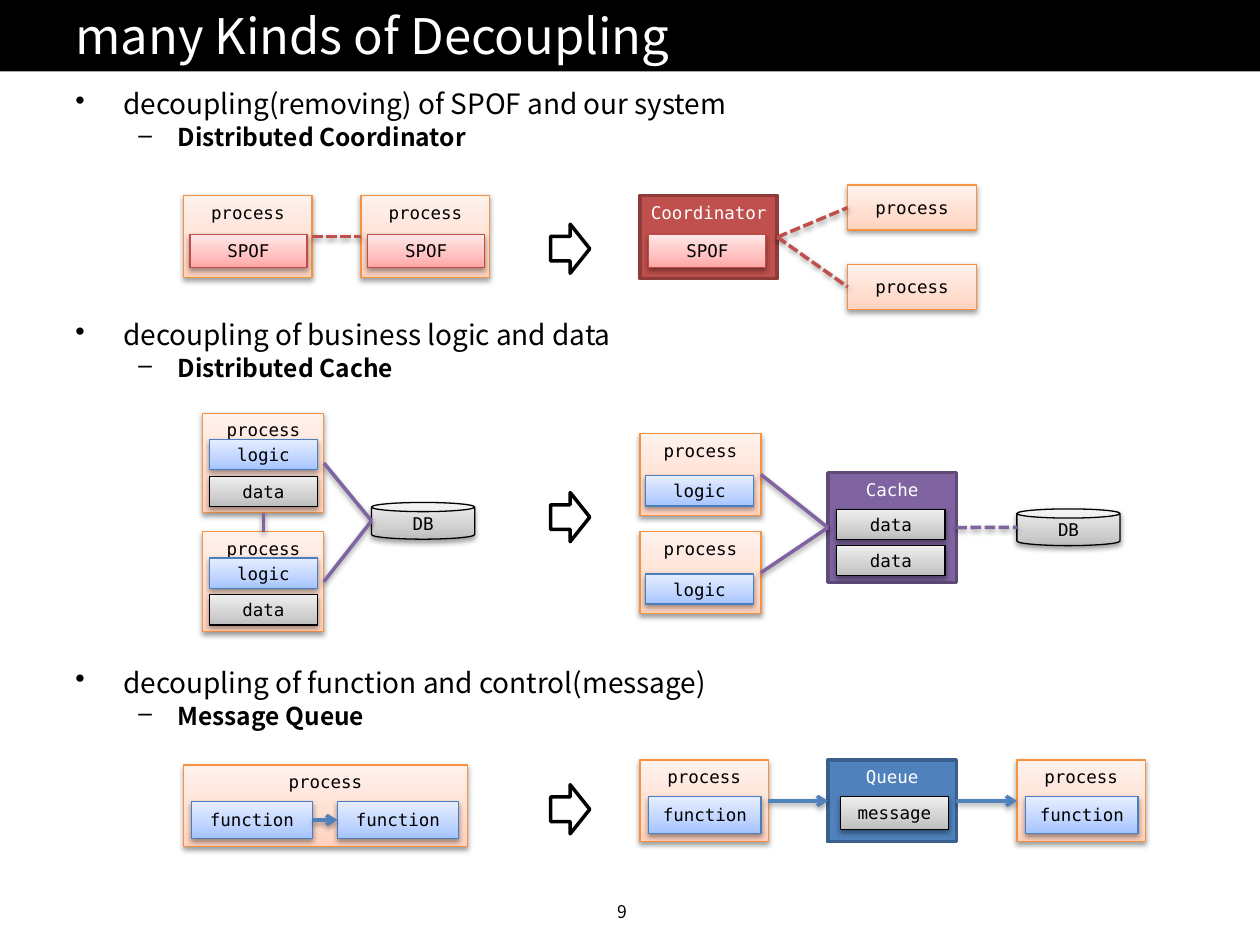
import copy

import pptx
import pptx.dml.color
import pptx.enum.dml
import pptx.enum.shapes
import pptx.enum.text
import pptx.oxml
import pptx.oxml.ns
import pptx.util

Cm, Pt = pptx.util.Cm, pptx.util.Pt
RGB = pptx.dml.color.RGBColor.from_string
SHAPE = pptx.enum.shapes.MSO_SHAPE
ANCHOR = pptx.enum.text.MSO_ANCHOR
ALIGN = pptx.enum.text.PP_ALIGN
qn = pptx.oxml.ns.qn

TEXT_FONT, LABEL_FONT = "Noto Sans CJK KR", "DejaVu Sans Mono"
BLACK, WHITE = RGB("000000"), RGB("FFFFFF")
RED, PURPLE, BLUE = RGB("C0504D"), RGB("8064A2"), RGB("4F81BD")

# Fill colours (three for a gradient, from the bottom up), then the outline
PROCESS = ([RGB("FFD2BD"), RGB("FFDED0"), RGB("FFF2ED")], RGB("F69240"))
SPOF = ([RGB("FFA6A5"), RGB("FFC0BF"), RGB("FFE7E7")], RGB("BF4C48"))
LOGIC = ([RGB("A4C4FF"), RGB("BFD4FF"), RGB("E6EEFF")], RGB("4B7EBC"))
DATA = ([RGB("BDBDBD"), RGB("D1D1D1"), RGB("EEEEEE")], BLACK)
COORDINATOR = ([RED], RGB("8E3B39"))
CACHE = ([PURPLE], RGB("5F4A78"))
QUEUE = ([BLUE], RGB("3A5F8C"))
ARROW = ([WHITE], BLACK)

# Sides of a rectangle
TOP, LEFT, BOTTOM, RIGHT = range(4)
# Left edges of the parts within a diagram, in cm
ARROW_X, AFTER_X, HUB_X, FAR_X = 7.4, 9.2, 12.99, 16.8


def format_runs(paragraph, size, color, font=TEXT_FONT, bold=False):
    for run in paragraph.runs:
        run.font.size, run.font.name, run.font.bold = Pt(size), font, bold
        run.font.color.rgb = color


def add_shadow(effects):
    effects.append(pptx.oxml.parse_xml(
        f'<a:outerShdw {pptx.oxml.ns.nsdecls("a")} blurRad="40000" dist="20000" '
        'dir="5400000" rotWithShape="0"><a:srgbClr val="000000">'
        '<a:alpha val="38000"/></a:srgbClr></a:outerShdw>'))


def add_box(shapes, x, y, width, height, style, label="",
            anchor=ANCHOR.MIDDLE, preset=SHAPE.RECTANGLE):
    colors, outline = style
    box = shapes.add_shape(preset, Cm(x), Cm(y), Cm(width), Cm(height))
    box.shadow.inherit = False
    box.line.color.rgb = outline
    if len(colors) == 1:
        box.fill.solid()
        box.fill.fore_color.rgb = colors[0]
        box.line.width = Pt(2)
    else:
        box.fill.gradient()
        box.fill.gradient_angle = 90
        properties = box.element.spPr
        stop_list = properties.find(".//" + qn("a:gsLst"))
        stop_list.insert(1, copy.deepcopy(stop_list[0]))
        for stop, position, color in zip(box.fill.gradient_stops, (0, 0.35, 1), colors):
            stop.position, stop.color.rgb = position, color
        box.line.width = Pt(0.75)
        add_shadow(properties.find(qn("a:effectLst")))
    if label:
        frame = box.text_frame
        frame.text = label
        frame.word_wrap, frame.vertical_anchor = False, anchor
        frame.paragraphs[0].alignment = ALIGN.CENTER
        format_runs(frame.paragraphs[0], 10, WHITE if len(colors) == 1 else BLACK, LABEL_FONT)
    return box


def add_node(slide, x, y, width, height, style, label, parts):
    """Group a labelled frame with its parts, given relative to the frame."""
    shapes = slide.shapes.add_group_shape().shapes
    frame = add_box(shapes, x, y, width, height, style, label, ANCHOR.TOP)
    boxes = [add_box(shapes, x + dx, y + dy, *rest) for dx, dy, *rest in parts]
    return frame, boxes


def add_database(slide, x, y):
    return add_box(slide.shapes, x, y, 2.08, 0.74, DATA, "DB", preset=SHAPE.CAN)


def add_step_arrow(slide, x, y):
    add_box(slide.shapes, x, y, 0.79, 0.99, ARROW, preset=SHAPE.RIGHT_ARROW)


def add_link(slide, start, end, color, dashed=False, arrow=False):
    """Join (rectangle, side) to (rectangle, side) or to a plain (x, y) point."""
    joins_box = not isinstance(end[0], int)
    end_point = (0, 0) if joins_box else end
    link = slide.shapes.add_connector(
        pptx.enum.shapes.MSO_CONNECTOR.STRAIGHT, 0, 0, *end_point)
    link.begin_connect(*start)
    if joins_box:
        link.end_connect(*end)
    link.line.color.rgb, link.line.width = color, Pt(2)
    if dashed:
        link.line.dash_style = pptx.enum.dml.MSO_LINE.SQUARE_DOT
    properties = link.element.spPr
    if arrow:
        tail = pptx.oxml.parse_xml(f'<a:tailEnd {pptx.oxml.ns.nsdecls("a")} type="arrow"/>')
        properties.find(qn("a:ln")).append(tail)
    effects = pptx.oxml.parse_xml(f'<a:effectLst {pptx.oxml.ns.nsdecls("a")}/>')
    add_shadow(effects)
    properties.append(effects)


def left_middle(box):
    return int(box.left), int(box.top + box.height / 2)


def add_title(slide, text):
    title = slide.shapes.title
    title.left, title.top, title.width, title.height = Cm(1.27), Cm(-0.08), Cm(24.13), Cm(1.57)
    title.text_frame.text = text
    title.text_frame.vertical_anchor = ANCHOR.MIDDLE
    title.text_frame.paragraphs[0].alignment = ALIGN.LEFT
    format_runs(title.text_frame.paragraphs[0], 28, WHITE)
    # Black band behind the title
    band = slide.shapes.add_shape(SHAPE.RECTANGLE, 0, Cm(-0.08), Cm(25.4), Cm(1.52))
    band.shadow.inherit = False
    band.fill.solid()
    band.fill.fore_color.rgb = BLACK
    band.line.fill.background()
    title.element.addprevious(band.element)


def add_heading(slide, x, y, kind, solution):
    frame = slide.shapes.add_textbox(Cm(x), Cm(y), Cm(22.83), Cm(1.7)).text_frame
    frame.word_wrap = True
    frame.text = f"{kind}\n{solution}"
    rows = (("•", 0.97, 0.97, 16, False), ("–", 2.06, 0.79, 14, True))
    for level, (paragraph, row) in enumerate(zip(frame.paragraphs, rows)):
        bullet, margin, hanging, size, bold = row
        format_runs(paragraph, size, BLACK, bold=bold)
        paragraph.level = level
        paragraph.line_spacing = 0.9
        paragraph.space_before = Pt(0.2 * size)
        properties = paragraph.runs[0].font and paragraph._p.get_or_add_pPr()
        properties.set("marL", str(Cm(margin)))
        properties.set("indent", str(-Cm(hanging)))
        properties.append(pptx.oxml.parse_xml(
            f'<a:buChar {pptx.oxml.ns.nsdecls("a")} char="{bullet}"/>'))


def add_coordinator_diagram(slide, x, y):
    spof = (2.36, 0.66, SPOF, "SPOF")
    # Before
    first, second = [
        add_node(slide, x + dx, y + 0.21, 2.59, 1.65, PROCESS, "process",
                 [(0.13, 0.79, *spof)])[0] for dx in (0, 3.58)]
    add_link(slide, (first, RIGHT), (second, LEFT), RED, dashed=True)
    add_step_arrow(slide, x + ARROW_X, y + 0.79)
    # After
    coordinator, _ = add_node(slide, x + AFTER_X, y + 0.21, 2.77, 1.68, COORDINATOR,
                              "Coordinator", [(0.18, 0.79, *spof)])
    for dy in (0, 1.6):
        process = add_box(slide.shapes, x + 13.39, y + dy, 2.59, 0.91, PROCESS, "process")
        add_link(slide, (coordinator, RIGHT), (process, LEFT), RED, dashed=True)


def add_cache_diagram(slide, x, y):
    logic, data = (2.18, 0.61, LOGIC, "logic"), (2.18, 0.61, DATA, "data")
    # Before
    upper, lower = [
        add_node(slide, x + 0.39, y + dy, 2.44, 2.01, PROCESS, "process",
                 [(0.13, 0.53, *logic), (0.13, 1.27, *data)])[0] for dy in (0, 2.39)]
    add_link(slide, (lower, TOP), (upper, BOTTOM), PURPLE)
    database = add_database(slide, x + 3.79, y + 1.8)
    for process in (upper, lower):
        add_link(slide, (process, RIGHT), left_middle(database), PURPLE)
    add_step_arrow(slide, x + ARROW_X, y + 1.6)
    # After
    cache, _ = add_node(slide, x + HUB_X, y + 1.2, 2.59, 2.21, CACHE, "Cache",
                        [(0.18, dy, *data) for dy in (0.74, 1.47)])
    for dy in (0.41, 2.39):
        process, _ = add_node(slide, x + AFTER_X, y + dy, 2.44, 1.65, PROCESS, "process",
                              [(0.11, 0.85, *logic)])
        add_link(slide, (cache, LEFT), (process, RIGHT), PURPLE)
    database = add_database(slide, x + FAR_X, y + 1.93)
    add_link(slide, (cache, RIGHT), left_middle(database), PURPLE, dashed=True)


def add_queue_diagram(slide, x, y):
    # Before
    _, (caller, callee) = add_node(
        slide, x, y + 0.1, 5.72, 1.65, PROCESS, "process",
        [(dx, 0.74, 2.44, 0.74, LOGIC, "function") for dx in (0.16, 3.1)])
    add_link(slide, (caller, RIGHT), (callee, LEFT), BLUE, arrow=True)
    add_step_arrow(slide, x + ARROW_X, y + 0.5)
    # After
    sender, receiver = [
        add_node(slide, x + dx, y, 2.59, 1.65, PROCESS, "process",
                 [(0.18, 0.74, 2.26, 0.74, LOGIC, "function")])[0] for dx in (AFTER_X, FAR_X)]
    queue, _ = add_node(slide, x + HUB_X, y, 2.59, 1.65, QUEUE, "Queue",
                        [(0.25, 0.74, 2.18, 0.66, DATA, "message")])
    add_link(slide, (sender, RIGHT), (queue, LEFT), BLUE, arrow=True)
    add_link(slide, (queue, RIGHT), (receiver, LEFT), BLUE, arrow=True)


def add_page_number(slide, x, y, number):
    frame = slide.shapes.add_textbox(Cm(x), Cm(y), Cm(1.04), Cm(0.69)).text_frame
    frame.text = number
    frame.paragraphs[0].alignment = ALIGN.CENTER
    format_runs(frame.paragraphs[0], 10, BLACK)


def main():
    deck = pptx.Presentation()
    deck.slide_width, deck.slide_height = Cm(25.4), Cm(19.05)
    slide = deck.slides.add_slide(deck.slide_layouts[5])
    add_title(slide, "many Kinds of Decoupling")
    sections = (
        (1.7, "decoupling(removing) of SPOF and our system", "Distributed Coordinator",
         add_coordinator_diagram, 3.73),
        (6.35, "decoupling of business logic and data", "Distributed Cache",
         add_cache_diagram, 8.33),
        (13.36, "decoupling of function and control(message)", "Message Queue",
         add_queue_diagram, 15.32),
    )
    for heading_y, kind, solution, add_diagram, diagram_y in sections:
        add_heading(slide, 1.27, heading_y, kind, solution)
        add_diagram(slide, 3.7, diagram_y)
    add_page_number(slide, 12.02, 18.03, "9")
    deck.save("out.pptx")


if __name__ == "__main__":
    main()
